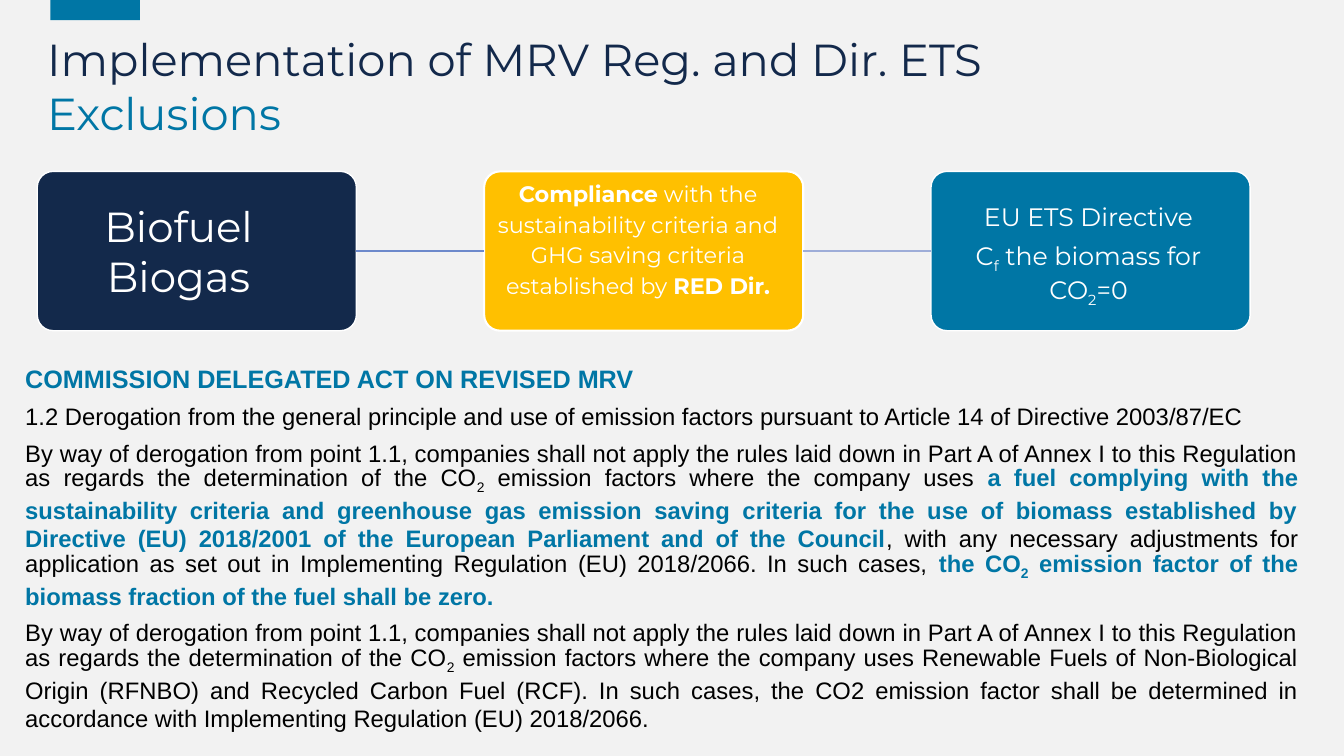
from lxml.etree import SubElement
from pptx import Presentation
from pptx.dml.color import RGBColor
from pptx.enum.shapes import MSO_CONNECTOR as CONN, MSO_SHAPE as SHAPE
from pptx.enum.text import MSO_ANCHOR as ANCHOR, PP_ALIGN as ALIGN
from pptx.oxml.ns import qn
from pptx.util import Pt

NAVY, TEAL, AMBER = "13294B", "0076A5", "FFC000"
WHITE, BLACK = "FFFFFF", "000000"
BOLD, SUB = {"bold": True}, {"sub": True}
KEY = {"bold": True, "color": TEAL}

DEROGATION = ("By way of derogation from point 1.1, companies shall not apply the rules laid down in "
              "Part A of Annex I to this Regulation as regards the determination of the CO")

CARDS = [
    dict(fill=NAVY, line=1, size=30, left=16, right=42,
         paras=[[("Biofuel Biogas", {})]]),
    dict(fill=AMBER, line=1.5, size=16, left=2, right=10, anchor=ANCHOR.TOP, spacing=22,
         paras=[[("Compliance", BOLD),
                 (" with the sustainability criteria and GHG saving criteria established by ", {}),
                 ("RED Dir.", BOLD)]]),
    dict(fill=TEAL, line=1, size=18, left=9, right=12, top=3, spacing=24.5,
         paras=[[("EU ETS Directive", {})],
                [("C", {}), ("f", SUB), (" the biomass for CO", {}), ("2", SUB), ("=0", {})]]),
]

BODY = [
    [("COMMISSION DELEGATED ACT ON REVISED MRV", {**KEY, "size": 18})],
    [("1.2 Derogation from the general principle and use of emission factors pursuant to "
      "Article 14 of Directive 2003/87/EC", {})],
    [(DEROGATION, {}), ("2", SUB),
     (" emission factors where the company uses ", {}),
     ("a fuel complying with the sustainability criteria and greenhouse gas emission saving criteria "
      "for the use of biomass established by Directive (EU) 2018/2001 of the European Parliament "
      "and of the Council", KEY),
     (", with any necessary adjustments for application as set out in Implementing Regulation "
      "(EU) 2018/2066. In such cases, ", {}),
     ("the CO", KEY), ("2", {**KEY, **SUB}),
     (" emission factor of the biomass fraction of the fuel shall be zero.", KEY)],
    [(DEROGATION, {}), ("2", SUB),
     (" emission factors where the company uses Renewable Fuels of Non-Biological Origin (RFNBO) "
      "and Recycled Carbon Fuel (RCF). In such cases, the CO2 emission factor shall be determined "
      "in accordance with Implementing Regulation (EU) 2018/2066.", {})],
]


def rgb(color):
    return RGBColor.from_string(color)


def set_frame(tf, left=0, top=0, right=0, bottom=0, anchor=ANCHOR.TOP):
    tf.word_wrap = True
    tf.margin_left, tf.margin_top = Pt(left), Pt(top)
    tf.margin_right, tf.margin_bottom = Pt(right), Pt(bottom)
    tf.vertical_anchor = anchor


def fill_text(tf, paras, font, size, color, align, spacing=None, before=0):
    for i, runs in enumerate(paras):
        p = tf.add_paragraph() if i else tf.paragraphs[0]
        p.alignment = align
        if spacing:
            p.line_spacing = Pt(spacing)
        if i and before:
            p.space_before = Pt(before)
        for text, style in runs:
            r = p.add_run()
            r.text = text
            r.font.name = font
            r.font.size = Pt(style.get("size", size))
            r.font.bold = style.get("bold", False)
            r.font.color.rgb = rgb(style.get("color", color))
            if style.get("sub"):
                r._r.get_or_add_rPr().set("baseline", "-25000")


def add_text(s, x, y, w, h):
    return s.shapes.add_textbox(Pt(x), Pt(y), Pt(w), Pt(h)).text_frame


def add_block(s, kind, x, y, w, h, fill):
    sp = s.shapes.add_shape(kind, Pt(x), Pt(y), Pt(w), Pt(h))
    sp.shadow.inherit = False
    sp.fill.solid()
    sp.fill.fore_color.rgb = rgb(fill)
    sp.line.fill.background()
    return sp


def add_card(s, x, card):
    sp = add_block(s, SHAPE.ROUNDED_RECTANGLE, x, 122.4, 228, 113.8, card["fill"])
    sp.adjustments[0] = 0.1
    sp.line.color.rgb = rgb(WHITE)
    sp.line.width = Pt(card["line"])
    set_frame(sp.text_frame, card["left"], card.get("top", 0), card["right"],
              anchor=card.get("anchor", ANCHOR.MIDDLE))
    fill_text(sp.text_frame, card["paras"], "Montserrat", card["size"], WHITE,
              ALIGN.CENTER, card.get("spacing"), before=6)
    return sp


def join_cards(s, start, end, color):
    c = s.shapes.add_connector(CONN.STRAIGHT, 0, 0, 0, 0)
    c.begin_connect(start, 3)
    c.end_connect(end, 1)
    c.line.color.rgb = rgb(color)
    c.line.width = Pt(1)
    SubElement(c._element.spPr, qn("a:effectLst"))


def main():
    prs = Presentation()
    prs.slide_width, prs.slide_height = Pt(960), Pt(540)
    s = prs.slides.add_slide(prs.slide_layouts[6])
    s.background.fill.solid()
    s.background.fill.fore_color.rgb = rgb("F2F2F2")

    add_block(s, SHAPE.RECTANGLE, 36, 0, 64, 14.4, TEAL)

    tf = add_text(s, 26.6, 25.9, 881.3, 70.6)
    set_frame(tf, 7.2, 3.6, 7.2, 3.6, ANCHOR.MIDDLE)
    title = [[("Implementation of MRV Reg. and Dir. ETS", {})], [("Exclusions", {"color": TEAL})]]
    fill_text(tf, title, "Montserrat", 32, NAVY, ALIGN.LEFT)

    cards = [add_card(s, 26.6 + 319.2 * i, card) for i, card in enumerate(CARDS)]
    for start, end, color in zip(cards, cards[1:], ("6D89CB", "9EADD8")):
        join_cards(s, start, end, color)

    tf = add_text(s, 18, 260.5, 909.5, 264)
    set_frame(tf)
    fill_text(tf, BODY, "Arial", 17, BLACK, ALIGN.JUSTIFY, 20.4, before=6)

    prs.save("out.pptx")


if __name__ == "__main__":
    main()
